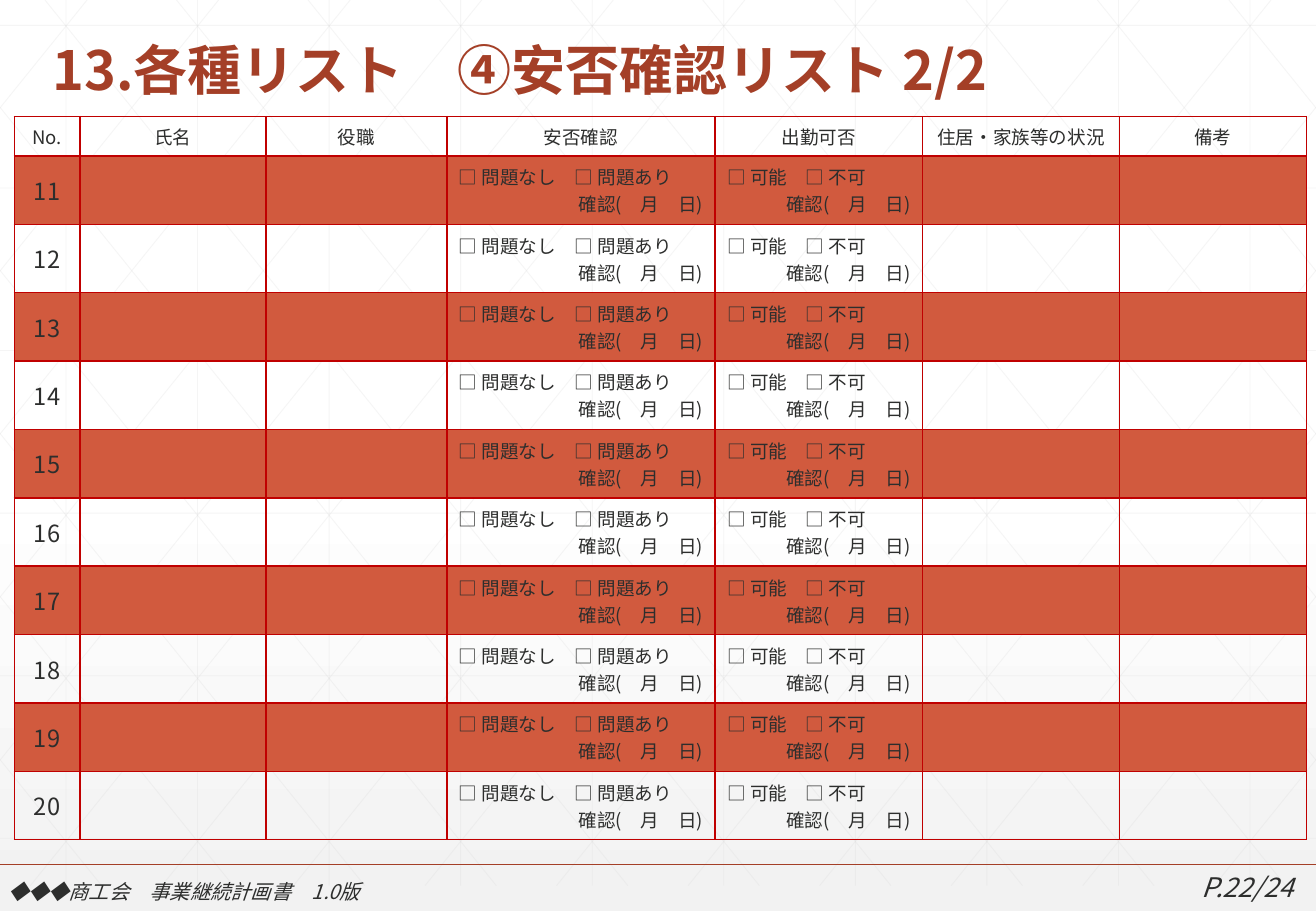
from lxml import etree
from pptx import Presentation
from pptx.dml.color import RGBColor
from pptx.enum import shapes, text
from pptx.oxml import ns, parse_xml
from pptx.util import Cm, Pt

FONT = "Noto Sans CJK JP"
COLORS = {"title": "A43F27", "ink": "2D2E2D", "grid": "D9D9D9", "border": "C00000",
          "band": "D15A3E", "white": "FFFFFF", "base": "F2F2F2"}
LEFT, CENTER, RIGHT = text.PP_ALIGN.LEFT, text.PP_ALIGN.CENTER, text.PP_ALIGN.RIGHT
SLIDE_W, SLIDE_H = 27.51, 19.05
COLUMNS = [("No.", 1.37), ("氏名", 3.89), ("役職", 3.78), ("安否確認", 5.61),
           ("出勤可否", 4.34), ("住居・家族等の状況", 4.11), ("備考", 3.91)]
CHECKS = {3: "□ 問題なし　□ 問題あり", 4: "□ 可能　□ 不可"}
CONFIRMED = "確認(　月　日)"
HEADER_H, ROW_H = 0.82, 1.43


def rgb(name):
    """Return the named colour."""
    return RGBColor.from_string(COLORS[name])


def write(p, content, size=11, color="ink", bold=False, italic=False, align=LEFT):
    """Add formatted text to a paragraph."""
    p.alignment = align
    r = p.add_run()
    r.text = content
    f = r.font
    f.name, f.size, f.bold, f.italic = FONT, Pt(size), bold, italic
    f.color.rgb = rgb(color)
    etree.SubElement(r._r.get_or_add_rPr(), ns.qn("a:ea"), typeface=FONT)


def set_alpha(fill, percent):
    """Make a solid fill translucent."""
    clr = fill._xPr.find(".//" + ns.qn("a:srgbClr"))
    etree.SubElement(clr, ns.qn("a:alpha"), val=str(percent * 1000))


def add_line(parent, x1, y1, x2, y2, color, width, alpha=None):
    """Draw a straight line between two points in centimetres."""
    c = parent.add_connector(shapes.MSO_CONNECTOR.STRAIGHT, Cm(x1), Cm(y1), Cm(x2), Cm(y2))
    c.line.width = Pt(width)
    c.line.color.rgb = rgb(color)
    if alpha:
        set_alpha(c.line.fill, alpha)
    etree.SubElement(c._element.spPr, ns.qn("a:effectLst"))


def add_background(s):
    """Fill the slide with a vertical gradient."""
    s.background.fill.solid()
    bg = s._element.cSld.bg.bgPr
    stops = "".join(f'<a:gs pos="{pos}"><a:srgbClr val="{COLORS[name]}"/></a:gs>'
                    for pos, name in ((0, "white"), (53000, "white"), (100000, "base")))
    bg.replace(bg[0], parse_xml(
        f'<a:gradFill {ns.nsdecls("a")} rotWithShape="1"><a:gsLst>{stops}</a:gsLst>'
        '<a:lin ang="5400000" scaled="0"/></a:gradFill>'))


def add_lattice(s, w, h):
    """Lay a faint grid with crossing diagonals behind the content."""
    g = s.shapes.add_group_shape()
    pitch, slope = 2.75, 1.24
    style = ("grid", 0.5, 25)
    for i in range(10):
        x = 1.38 + pitch * i
        add_line(g.shapes, x, 0, x, h, *style)
    for i in range(6):
        y = 0.53 + 3.4 * i
        add_line(g.shapes, 0, y, w, y, *style)
    for i in range(-5, 10):
        x = 0.94 + pitch * i
        y1, y2 = max(0, -x * slope), min(h, (w - x) * slope)
        x1, x2 = x + y1 / slope, x + y2 / slope
        add_line(g.shapes, x1, y1, x2, y2, *style)
        add_line(g.shapes, w - x1, y1, w - x2, y2, *style)
    s.shapes._spTree.insert(2, g._element)


def add_title(s, x, y, w, h):
    """Place the heading in the title placeholder."""
    sp = s.shapes.title
    sp.left, sp.top, sp.width, sp.height = Cm(x), Cm(y), Cm(w), Cm(h)
    tf = sp.text_frame
    tf.auto_size = text.MSO_AUTO_SIZE.NONE
    tf.vertical_anchor = text.MSO_ANCHOR.BOTTOM
    p = tf.paragraphs[0]
    p.line_spacing = 0.9
    write(p, "13.各種リスト　④安否確認リスト 2/2", size=32, color="title", bold=True)


def style_cell(cell, banded):
    """Set the fill and borders of a cell."""
    cell.vertical_anchor = text.MSO_ANCHOR.MIDDLE
    tc = cell._tc.get_or_add_tcPr()
    for side in ("lnL", "lnR", "lnT", "lnB"):
        tc.append(parse_xml(
            f'<a:{side} {ns.nsdecls("a")} w="12700"><a:solidFill>'
            f'<a:srgbClr val="{COLORS["border"]}"/></a:solidFill></a:{side}>'))
    if banded:
        cell.fill.solid()
        cell.fill.fore_color.rgb = rgb("band")
        set_alpha(cell.fill, 20)
    else:
        cell.fill.background()


def add_safety_table(s, x, y, first, last):
    """Build the safety check table for a range of numbers."""
    count = last - first + 1
    w = sum(width for _, width in COLUMNS)
    t = s.shapes.add_table(count + 1, len(COLUMNS), Cm(x), Cm(y), Cm(w),
                           Cm(HEADER_H + ROW_H * count)).table
    t.first_row = t.horz_banding = False
    for i, row in enumerate(t.rows):
        row.height = Cm(ROW_H if i else HEADER_H)
        for j, (label, width) in enumerate(COLUMNS):
            t.columns[j].width = Cm(width)
            cell = t.cell(i, j)
            style_cell(cell, i % 2 == 1)
            tf = cell.text_frame
            p = tf.paragraphs[0]
            if i == 0:
                write(p, label, align=CENTER)
            elif j == 0:
                write(p, str(first + i - 1), size=14, align=CENTER)
            elif j in CHECKS:
                write(p, CHECKS[j])
                write(tf.add_paragraph(), CONFIRMED, align=RIGHT)


def add_footer(s, y, w):
    """Draw the footer rule with the document name and page number."""
    add_line(s.shapes, 0, y, w, y, "title", 1)
    for x, top, width, h, content, size, align in (
            (w - 4.22, y, 3.99, 0.94, "P.22/24", 16, RIGHT),
            (-0.08, y + 0.18, 13.39, 0.76, "◆◆◆商工会　事業継続計画書\t1.0版", 12, LEFT)):
        tf = s.shapes.add_textbox(Cm(x), Cm(top), Cm(width), Cm(h)).text_frame
        tf.word_wrap = True
        write(tf.paragraphs[0], content, size=size, italic=True, align=align)


def main():
    """Build the safety check list slide."""
    prs = Presentation()
    prs.slide_width, prs.slide_height = Cm(SLIDE_W), Cm(SLIDE_H)
    s = prs.slides.add_slide(prs.slide_layouts[5])
    add_background(s)
    add_lattice(s, SLIDE_W, 18.52)
    add_title(s, 0.84, 0.41, 25.78, 1.85)
    add_safety_table(s, 0.3, 2.44, 11, 20)
    add_footer(s, 18.08, SLIDE_W)
    prs.save("out.pptx")


if __name__ == "__main__":
    main()
